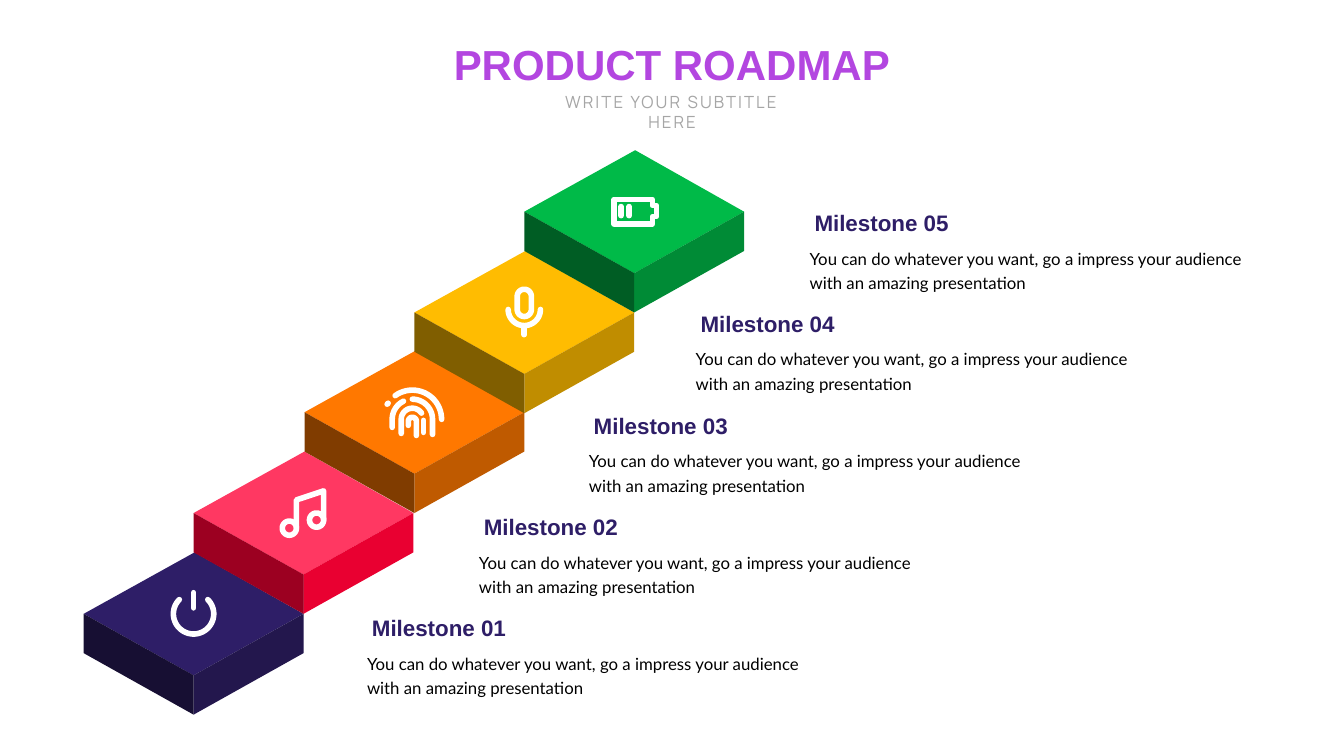
"""Build a product roadmap slide: a staircase of five isometric blocks with milestones."""
from dataclasses import dataclass
from math import cos, radians, sin

from lxml import etree
from pptx import Presentation
from pptx import util as u
from pptx.dml.color import RGBColor
from pptx.enum import text
from pptx.oxml.ns import qn

PX = 9144


@dataclass(frozen=True)
class Theme:
    heading: str = "Arial"
    light: str = "Manrope"
    body: str = "Lato"
    title_pt: int = 30
    label_pt: int = 16
    body_pt: int = 12
    leading_pt: float = 17.5
    stroke_pt: int = 4
    title: str = "B346E0"
    subtitle: str = "A6A6A6"
    label: str = "2E1E67"
    ink: str = "000000"
    icon: str = "FFFFFF"
    blocks: tuple = (
        ("2E1E67", "23174D", "170F33"),
        ("FF3862", "E90031", "9C0021"),
        ("FF7800", "BF5A00", "803C00"),
        ("FFBC01", "C08D00", "805E00"),
        ("00BA48", "008B36", "005D24"),
    )


T = Theme()
BODY = "You can do whatever you want, go a impress your audience with an amazing presentation"
LABEL_LEFTS = (359, 470, 579, 685, 798)
APEX, RIGHT, FRONT, LEFT = (110, 0), (218, 61), (109, 122), (0, 61)
DEPTH = 39


def px(n):
    return u.Emu(round(n * PX))


def arc(cx, cy, r, start, end):
    steps = max(2, abs(end - start) // 6)
    angles = [radians(start + (end - start) * i / steps) for i in range(steps + 1)]
    return [(cx + r * cos(a), cy + r * sin(a)) for a in angles]


def power():
    return [arc(0, 0, 20, -45, 225), [(0, -21), (0, -6)]]


def music():
    return [arc(-14, 15, 7, 0, 360), arc(13, 7, 7, 0, 360),
            [(-7, 15), (-7, -13), (20, -22), (20, 7)]]


def fingerprint():
    return [
        arc(-2, 7, 29, -126, 0),
        arc(-2, 7, 20, -90, 0) + [(18, 22)],
        [(-22, 15)] + arc(-2, 7, 20, 180, 244),
        [(-13, 21)] + arc(-2, 7, 11, 180, 326),
        [(-6, 13)] + arc(-2, 9, 4, 180, 360) + [(2, 23)],
        [(9, 8), (9, 20)],
        [(-27, -8), (-26, -9)],
    ]


def microphone():
    capsule = arc(0, -16, 7, 180, 360) + arc(0, -3, 7, 0, 180)
    return [capsule + capsule[:1], arc(0, -3, 16, 0, 180), [(0, 14), (0, 22)]]


def battery():
    case = [(-20, -12), (18, -12), (18, -6), (22, -6), (22, 5), (18, 5), (18, 12), (-20, 12)]
    return [case + case[:1]] + [[(x, -5), (x, 4)] for x in (-13, -5)]


ICONS = (power, music, fingerprint, microphone, battery)


def outline(s, x, y, contours, close):
    placed = [[(px(x + dx), px(y + dy)) for dx, dy in c] for c in contours]
    fb = s.shapes.build_freeform(*placed[0][0], scale=1.0)
    for i, points in enumerate(placed):
        if i:
            fb.move_to(*points[0])
        fb.add_line_segments(points[1:], close=close)
    sp = fb.convert_to_shape()
    sp.shadow.inherit = False
    return sp


def add_face(s, x, y, points, color):
    sp = outline(s, x, y, [points], True)
    sp.fill.solid()
    sp.fill.fore_color.rgb = RGBColor.from_string(color)
    sp.line.fill.background()


def add_block(s, x, y, colors):
    drop = [(dx, dy + DEPTH) for dx, dy in (RIGHT, FRONT, LEFT)]
    faces = ((APEX, RIGHT, FRONT, LEFT),
             (RIGHT, drop[0], drop[1], FRONT),
             (FRONT, drop[1], drop[2], LEFT))
    for points, color in zip(faces, colors):
        add_face(s, x, y, points, color)


def add_icon(s, x, y, strokes):
    sp = outline(s, x, y, strokes, False)
    sp.fill.background()
    sp.line.color.rgb = RGBColor.from_string(T.icon)
    sp.line.width = u.Pt(T.stroke_pt)
    ln = sp.line._get_or_add_ln()
    ln.set("cap", "rnd")
    etree.SubElement(ln, qn("a:round"))


def add_text(s, box, words, font, size, color, bold=False, align=text.PP_ALIGN.LEFT):
    sp = s.shapes.add_textbox(*map(px, box))
    tf = sp.text_frame
    tf.word_wrap = True
    tf.auto_size = text.MSO_AUTO_SIZE.SHAPE_TO_FIT_TEXT
    tf.text = words
    p = tf.paragraphs[0]
    p.alignment = align
    r = p.runs[0]
    r.font.name, r.font.size, r.font.bold = font, u.Pt(size), bold
    r.font.color.rgb = RGBColor.from_string(color)
    return tf


def add_header(s):
    center = text.PP_ALIGN.CENTER
    add_text(s, (420, 33, 493, 61), "PRODUCT ROADMAP", T.heading, T.title_pt, T.title, True, center)
    tf = add_text(s, (534, 86, 265, 30), "WRITE YOUR SUBTITLE HERE",
                  T.light, T.body_pt, T.subtitle, align=center)
    tf.paragraphs[0].runs[0].font._element.set("spc", "150")


def add_milestone(s, x, y, number):
    tf = add_text(s, (x, y, 175, 37), f"Milestone {number:02}", T.heading, T.label_pt, T.label, True)
    tf.vertical_anchor = text.MSO_ANCHOR.BOTTOM
    tf = add_text(s, (x, y + 37, 452, 53), BODY, T.body, T.body_pt, T.ink)
    tf.margin_left = tf.margin_right = px(5)
    tf.margin_top = tf.margin_bottom = px(3)
    p = tf.paragraphs[0]
    p.line_spacing, p.space_after = u.Pt(T.leading_pt), u.Pt(9)


def main():
    prs = Presentation()
    prs.slide_width, prs.slide_height = px(1333), px(750)
    s = prs.slides.add_slide(prs.slide_layouts[6])
    add_header(s)
    for i, (colors, icon, label_left) in enumerate(zip(T.blocks, ICONS, LABEL_LEFTS)):
        x, y = 83 + round(109.3 * i), 548 - round(99.8 * i)
        add_block(s, x, y, colors)
        add_icon(s, x + 109, y + 61, icon())
        add_milestone(s, label_left, 604 - round(100.5 * i), i + 1)
    prs.save("out.pptx")


if __name__ == "__main__":
    main()
